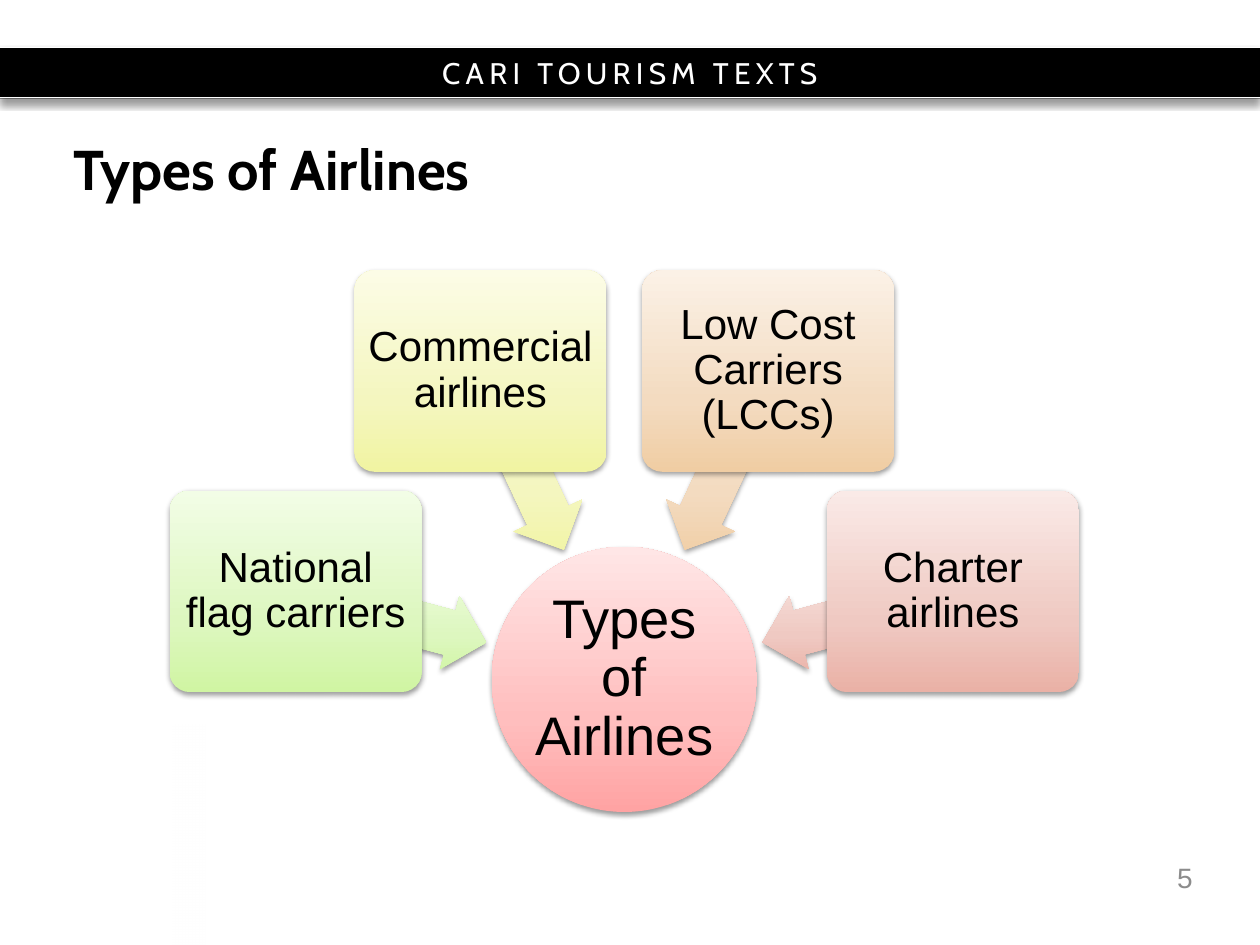
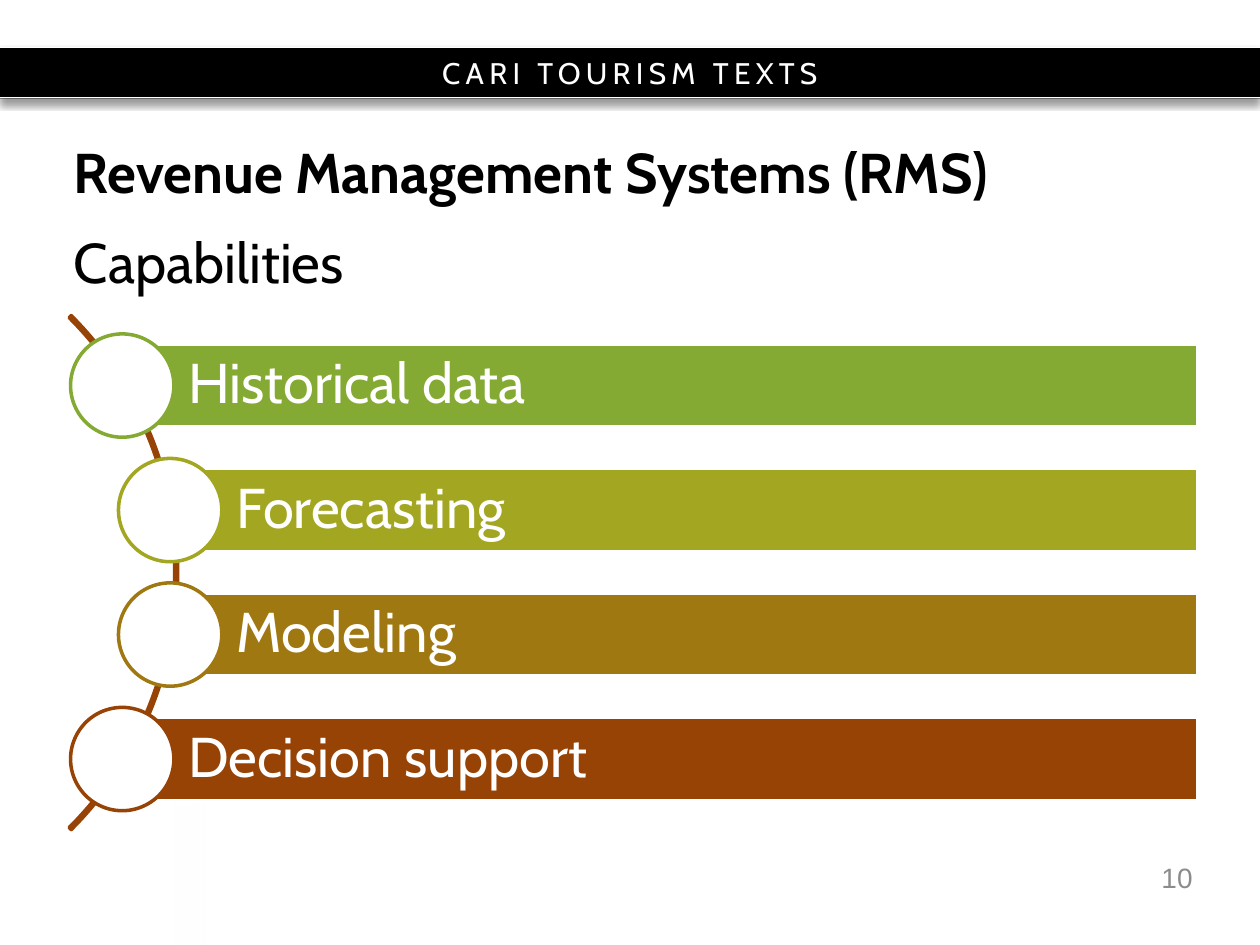
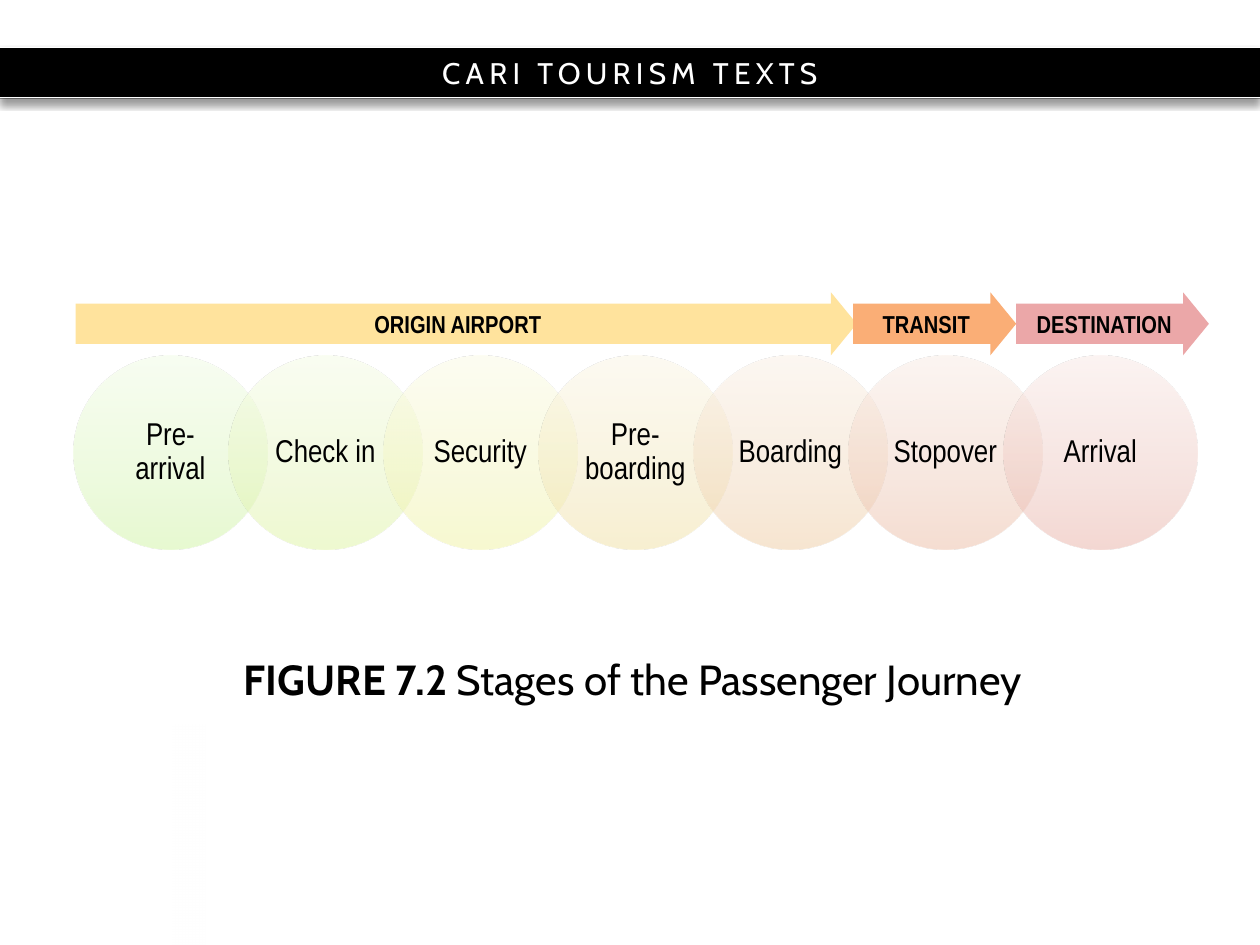
from math import cos, radians, sin

from lxml.etree import SubElement
from pptx import Presentation
from pptx.dml.color import RGBColor
from pptx.enum.shapes import MSO_CONNECTOR, MSO_SHAPE as SHAPE
from pptx.enum.text import MSO_ANCHOR, MSO_AUTO_SIZE, PP_ALIGN as ALIGN
from pptx.oxml.ns import qn
from pptx.util import Inches, Pt

COLUMNS, ROWS = 100, 75
WIDTH, HEIGHT = Inches(10), Inches(7.5)

BLACK, WHITE, GREY = "000000", "FFFFFF", "8C8C8C"
HEADING, BODY, NARROW = "Cabin", "Arial", "Arial Narrow"
BAND_TEXT = "CARI TOURISM TEXTS"

# Gradient colours from the bottom of a shape to its top
GREEN = "D0F5A3", "DDF7BF", "F2FDE6"
LIME = "DFF5A2", "E7F6BF", "F6FDE6"
YELLOW = "F1F4A2", "F4F6BF", "FCFCE6"
GOLD = "F2E1A3", "F4E9BF", "FCF7E6"
ORANGE = "F0CDA3", "F3DBC0", "FBF1E6"
SALMON = "EDBDA5", "F1D0C0", "FAEDE6"
ROSE = "EAB1A6", "EFC9C2", "FAEAE7"
RED = "FFA3A3", "FFBEBE", "FFE6E6"


def color(code):
    return RGBColor.from_string(code)


def across(columns):
    return round(WIDTH * columns / COLUMNS)


def down(rows):
    return round(HEIGHT * rows / ROWS)


def add_color(parent, code, opacity):
    tone = SubElement(parent, qn("a:srgbClr"), val=code)
    if opacity < 100:
        SubElement(tone, qn("a:alpha"), val=str(opacity * 1000))


def format_run(span, size, font, tone, bold=False):
    span.font.size = Pt(size)
    span.font.name = font
    span.font.bold = bold
    span.font.color.rgb = color(tone)


class SlideBuilder:
    """Holds the deck's style and the slide being built; lengths are grid units."""

    def __init__(self):
        self.deck = Presentation()
        self.deck.slide_width, self.deck.slide_height = WIDTH, HEIGHT
        self.page = None

    def start(self, number=None):
        """Add a slide with the shared band, fade strip and page number."""
        self.page = self.deck.slides.add_slide(self.deck.slide_layouts[5])
        band = self.shape(SHAPE.RECTANGLE, 0, 3.75, COLUMNS, 4.06, BLACK)
        self.shadow(band, 40, 4, 3)
        self.text(band, BAND_TEXT, 17, HEADING, WHITE)
        band.text_frame.paragraphs[0].runs[0].font._element.set("spc", "300")
        for row in (3.75, 7.75):
            self.rule(row)
        strip = self.shape(SHAPE.RECTANGLE, 13.7, 57.5, 2.6, 17.5)
        self.gradient(strip, [(0, WHITE, 0), (100, WHITE, 100)], 0)
        if number:
            box = self.page.shapes.add_textbox(
                across(72.3), down(67.62), across(23.33), down(4))
            self.text(box, str(number), 16, BODY, GREY, ALIGN.RIGHT)

    def title(self, left, top, width, height, lines, size=32,
              align=ALIGN.LEFT, spacing=None, gap=0):
        """Fill the title; each line is a list of (words, bold) pairs."""
        box = self.page.shapes.title
        box.left, box.top = across(left), down(top)
        box.width, box.height = across(width), down(height)
        frame = box.text_frame
        frame.auto_size = MSO_AUTO_SIZE.NONE
        frame.word_wrap = True
        frame.vertical_anchor = MSO_ANCHOR.MIDDLE
        for index, line in enumerate(lines):
            para = frame.add_paragraph() if index else frame.paragraphs[0]
            para.alignment = align
            para.line_spacing = spacing
            para.space_before = Pt(gap if index else 0)
            for words, bold in line:
                span = para.add_run()
                span.text = words
                format_run(span, size, HEADING, BLACK, bold)

    def shape(self, kind, left, top, width, height, fill=None, line=None,
              adjust=()):
        shape = self.page.shapes.add_shape(
            kind, across(left), down(top), across(width), down(height))
        shape.shadow.inherit = False
        for index, value in enumerate(adjust):
            shape.adjustments[index] = value
        if fill:
            shape.fill.solid()
            shape.fill.fore_color.rgb = color(fill)
        else:
            shape.fill.background()
        if line:
            shape.line.color.rgb = color(line)
            shape.line.width = Pt(2)
        else:
            shape.line.fill.background()
        return shape

    def gradient(self, shape, stops, angle):
        """Fill with (position, colour, opacity) stops at a fixed, unrotated angle."""
        shape.fill.gradient()
        shape.fill.gradient_angle = angle
        fill = shape._element.spPr.find(qn("a:gradFill"))
        fill.set("rotWithShape", "0")
        stop_list = fill.find(qn("a:gsLst"))
        for stop in list(stop_list):
            stop_list.remove(stop)
        for position, code, opacity in stops:
            stop = SubElement(stop_list, qn("a:gs"), pos=str(position * 1000))
            add_color(stop, code, opacity)

    def tinted(self, kind, left, top, width, height, tones, opacity=100,
               adjust=()):
        """Add a shape that fades upwards through three tones."""
        shape = self.shape(kind, left, top, width, height, adjust=adjust)
        stops = [(place, tone, opacity) for place, tone in zip((0, 35, 100), tones)]
        self.gradient(shape, stops, 90)
        return shape

    def shadow(self, shape, opacity=38, blur=3.1, distance=1.6):
        effects = shape._element.spPr.find(qn("a:effectLst"))
        outer = SubElement(effects, qn("a:outerShdw"), blurRad=str(Pt(blur)),
                           dist=str(Pt(distance)), dir="5400000", rotWithShape="0")
        add_color(outer, BLACK, opacity)

    def rule(self, row):
        line = self.page.shapes.add_connector(
            MSO_CONNECTOR.STRAIGHT, 0, down(row), WIDTH, down(row))
        line.line.color.rgb = color(WHITE)
        line.line.width = Pt(0.75)
        SubElement(line._element.spPr, qn("a:effectLst"))

    def text(self, shape, words, size, font, tone=BLACK, align=ALIGN.CENTER,
             insets=(1, 0.5, 1, 0.5), spacing=None, bold=False):
        """Set one paragraph; insets are left, top, right, bottom."""
        frame = shape.text_frame
        frame.text = words
        frame.word_wrap = True
        frame.vertical_anchor = MSO_ANCHOR.MIDDLE
        left, top, right, bottom = insets
        frame.margin_left, frame.margin_right = across(left), across(right)
        frame.margin_top, frame.margin_bottom = down(top), down(bottom)
        para = frame.paragraphs[0]
        para.alignment = align
        para.line_spacing = spacing
        for span in para.runs:
            format_run(span, size, font, tone, bold)

    def save(self):
        self.deck.save("out.pptx")


def build_airline_types(slides):
    slides.start(5)
    slides.title(4.85, 11.35, 90.8, 4.8, [[("Types of Airlines", True)]],
                 spacing=Pt(32))
    hub_x, hub_y, hub_size = 49.55, 53.92, 21.05
    hub = slides.tinted(SHAPE.OVAL, hub_x - hub_size / 2, hub_y - hub_size / 2,
                        hub_size, hub_size, RED)
    slides.shadow(hub)
    slides.text(hub, "Types of Airlines", 31, BODY, insets=[0.2] * 4, spacing=0.9)

    def spoke(kind, angle, radius, width, height, tones, adjust):
        """Place a shape around the hub, measured from its left side."""
        left = hub_x - radius * cos(radians(angle)) - width / 2
        top = hub_y - radius * sin(radians(angle)) - height / 2
        shape = slides.tinted(kind, left, top, width, height, tones, adjust=adjust)
        slides.shadow(shape)
        return shape

    airlines = [("National flag carriers", GREEN), ("Commercial airlines", YELLOW),
                ("Low Cost Carriers (LCCs)", ORANGE), ("Charter airlines", ROSE)]
    for index, (name, tones) in enumerate(airlines):
        angle = 15 + 50 * index
        arrow = spoke(SHAPE.LEFT_ARROW, angle, 19.15, 15.6, 6, tones, (0.6, 0.5))
        arrow.rotation = 180 + angle
        card = spoke(SHAPE.ROUNDED_RECTANGLE, angle, 27, 20, 16, tones, (0.1,))
        slides.text(card, name, 24, BODY, insets=[0.5] * 4, spacing=0.9)


def build_revenue_systems(slides):
    slides.start(10)
    slides.title(4.85, 11.3, 90.8, 11.7,
                 [[("Revenue Management Systems (RMS)", True)],
                  [("Capabilities", False)]], gap=12.7)
    slides.shape(SHAPE.BLOCK_ARC, -43.6, 16.6, 57.7, 57.7, line="964305",
                 adjust=(189, 27, 0.004))
    bar_right, bar_height, knob_size = 95.1, 6.6, 8.2
    capabilities = [("Historical data", "84AA33", 9.7), ("Forecasting", "A3A621", 13.5),
                    ("Modeling", "A07811", 13.5), ("Decision support", "964305", 9.7)]
    for index, (name, tone, left) in enumerate(capabilities):
        middle = 30.6 + 9.88 * index
        bar = slides.shape(SHAPE.RECTANGLE, left, middle - bar_height / 2,
                           bar_right - left, bar_height, tone, WHITE)
        slides.text(bar, name, 32, HEADING, WHITE, ALIGN.LEFT,
                    (5.25, 0.9, 0.9, 0.9), 0.9)
        slides.shape(SHAPE.OVAL, left - knob_size / 2, middle - knob_size / 2,
                     knob_size, knob_size, WHITE, tone)


def build_passenger_journey(slides):
    slides.start()
    stages = [("Pre-\varrival", GREEN), ("Check in", LIME), ("Security", YELLOW),
              ("Pre-boarding", GOLD), ("Boarding", ORANGE), ("Stopover", SALMON),
              ("Arrival", ROSE)]
    for index, (name, tones) in enumerate(stages):
        circle = slides.tinted(SHAPE.OVAL, 5.83 + 12.3 * index, 28.2, 15.4, 15.4,
                               tones, opacity=50)
        slides.text(circle, name, 18, NARROW, insets=(0.8, 0.3, 0.8, 0.3), spacing=0.9)
    phases = [("ORIGIN AIRPORT", 6, 62, "FFE39D", 1), ("TRANSIT", 67.7, 12.95, "FAAE76", 1),
              ("DESTINATION", 80.65, 15.3, "EBA7A8", 0)]
    for name, left, width, tone, inset in phases:
        arrow = slides.shape(SHAPE.RIGHT_ARROW, left, 23.2, width, 5, tone,
                             adjust=(0.64, 0.41))
        slides.text(arrow, name, 14, NARROW, insets=(inset, 0, inset, 0), bold=True)
    slides.title(7.42, 50.75, 85.6, 5.8,
                 [[("FIGURE 7.2 ", True), ("Stages of the Passenger Journey", False)]],
                 size=24, align=ALIGN.CENTER, spacing=Pt(32))


def main():
    slides = SlideBuilder()
    build_airline_types(slides)
    build_revenue_systems(slides)
    build_passenger_journey(slides)
    slides.save()


if __name__ == "__main__":
    main()
